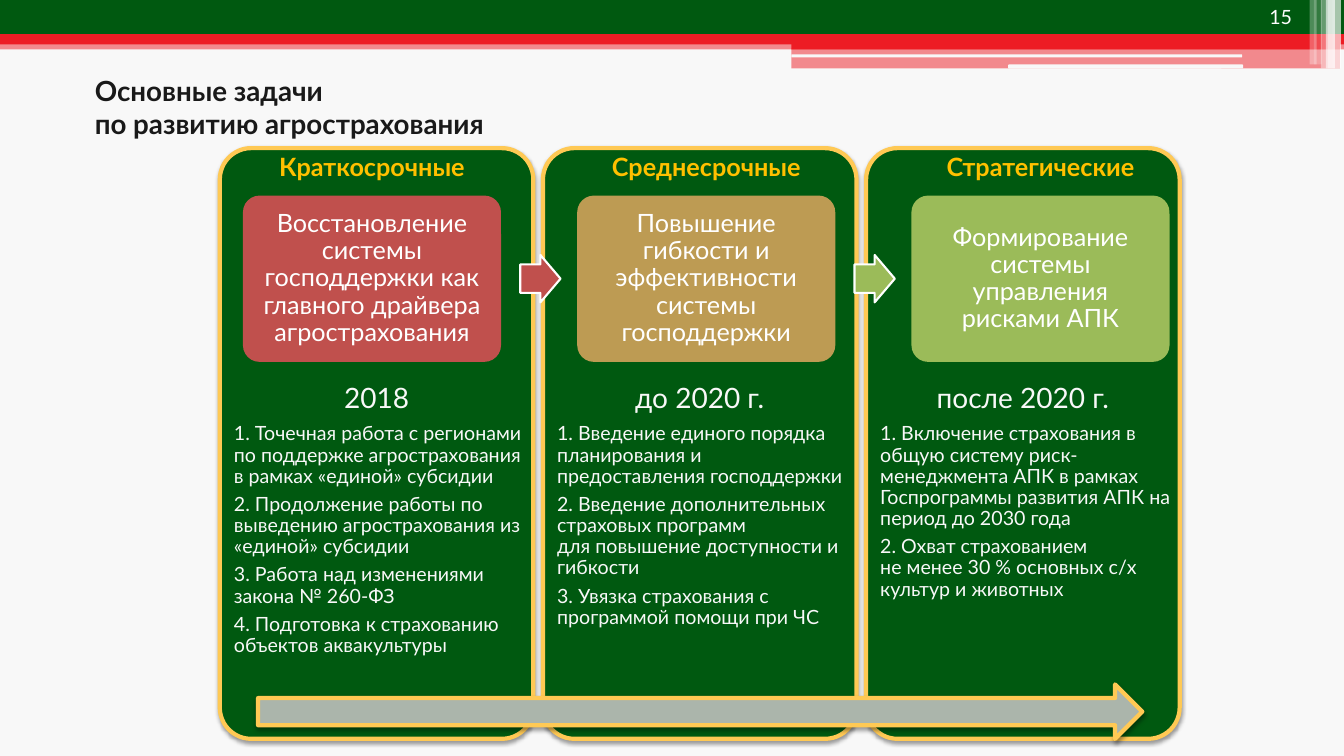
from dataclasses import dataclass

from lxml.etree import SubElement
from pptx import Presentation
from pptx.dml.color import RGBColor
from pptx.enum.shapes import MSO_SHAPE as SHAPE
from pptx.enum.text import MSO_ANCHOR as ANCHOR, MSO_AUTO_SIZE as AUTO, PP_ALIGN as ALIGN
from pptx.oxml.ns import qn
from pptx.util import Inches, Pt


@dataclass(frozen=True)
class Theme:
    """Colours, font and type sizes of the slide."""
    font: str = "Lato"
    paper: str = "F8F8F8"
    white: str = "FFFFFF"
    ink: str = "191919"
    green: str = "005910"
    red: str = "ED1C24"
    gold: str = "FFC954"
    heading: str = "FFC000"
    timeline: str = "ABB5AB"
    goals: tuple = ("C0504D", "BD9B53", "9BBB59")
    steps: tuple = ("C0504D", "9BBB59")
    title_size: float = 19.8
    year_size: float = 20
    goal_size: float = 18
    list_size: float = 14


T = Theme()

STAGES = [
    ("Краткосрочные",
     "Восстановление системы господдержки как главного драйвера агрострахования",
     "2018",
     ["1. Точечная работа с регионами по поддержке агрострахования в рамках «единой» субсидии",
      "2. Продолжение работы по выведению агрострахования из «единой» субсидии",
      "3. Работа над изменениями закона № 260-ФЗ",
      "4. Подготовка к страхованию объектов аквакультуры"]),
    ("Среднесрочные",
     "Повышение гибкости и эффективности системы господдержки",
     "до 2020 г.",
     ["1. Введение единого порядка планирования и предоставления господдержки",
      "2. Введение дополнительных страховых программ\nдля повышение доступности и гибкости",
      "3. Увязка страхования с программой помощи при ЧС"]),
    ("Стратегические",
     "Формирование системы управления рисками АПК",
     "после 2020 г.",
     ["1. Включение страхования в общую систему риск-менеджмента АПК в рамках "
      "Госпрограммы развития АПК на период до 2030 года",
      "2. Охват страхованием\nне менее 30 % основных с/х культур и животных"]),
]


def rgb(color):
    """Turn a hex string into a colour."""
    return RGBColor.from_string(color)


def add_box(slide, kind, box, fill, line=None, width=0, alpha=100, shadow=False):
    """Draw a preset shape in the box, given in inches."""
    sp = slide.shapes.add_shape(kind, *map(Inches, box))
    sp.shadow.inherit = False
    sp.fill.solid()
    sp.fill.fore_color.rgb = rgb(fill)
    if line:
        sp.line.color.rgb = rgb(line)
        sp.line.width = Pt(width)
    else:
        sp.line.fill.background()
    props = sp._element.spPr
    if alpha < 100:
        color = props.find(qn("a:solidFill"))[0]
        SubElement(color, qn("a:alpha"), val=str(alpha * 1000))
    if shadow:
        effect = SubElement(props.find(qn("a:effectLst")), qn("a:outerShdw"),
                            blurRad=str(Pt(3.1)), dist=str(Pt(1.6)),
                            dir="5400000", rotWithShape="0")
        color = SubElement(effect, qn("a:srgbClr"), val="000000")
        SubElement(color, qn("a:alpha"), val="38000")
    return sp


def setup_frame(sp, insets=(0.1, 0.05, 0.1, 0.05), anchor=ANCHOR.TOP):
    """Set wrapping, insets and anchor of a shape's text."""
    tf = sp.text_frame
    tf.word_wrap = True
    tf.auto_size = AUTO.NONE
    tf.vertical_anchor = anchor
    tf.margin_left, tf.margin_top, tf.margin_right, tf.margin_bottom = map(Inches, insets)
    return tf


def add_text(p, text, size, color, bold=False, align=ALIGN.LEFT):
    """Add runs to a paragraph, one for each line of text."""
    p.alignment = align
    for i, part in enumerate(text.split("\n")):
        if i:
            p.add_line_break()
        r = p.add_run()
        r.text = part
        r.font.name = T.font
        r.font.size = Pt(size)
        r.font.bold = bold
        r.font.color.rgb = rgb(color)


def add_header(slide, left, top, width):
    """Draw the coloured bands and the page number along the top."""
    right = left + width
    bands = [
        (SHAPE.RECTANGLE, left, 0.4, width, 0.09, T.red, 50),
        (SHAPE.RECTANGLE, left, 0, width, 0.34, T.green, 100),
        (SHAPE.RECTANGLE, left, 0.34, width, 0.1, T.red, 100),
        (SHAPE.RECTANGLE, right - 5.48, 0.39, 5.44, 0.1, T.red, 100),
        (SHAPE.RECTANGLE, right - 5.48, 0.48, 5.44, 0.2, T.red, 50),
        (SHAPE.ROUNDED_RECTANGLE, right - 5.48, 0.54, 4.47, 0.03, T.paper, 100),
        (SHAPE.ROUNDED_RECTANGLE, right - 3.33, 0.64, 2.33, 0.04, T.paper, 100),
    ]
    stripes = [(0.11, 0.08, 0.68, 65), (0.16, 0.07, 0.68, 65), (0.18, 0.07, 0.68, 60),
               (0.23, 0.07, 0.68, 40), (0.3, 0.08, 0.64, 20), (0.34, 0.07, 0.64, 30)]
    bands += [(SHAPE.RECTANGLE, right - back, 0, w, h, T.white, alpha)
              for back, w, h, alpha in stripes]
    for kind, x, y, w, h, color, alpha in bands:
        add_box(slide, kind, (x, top + y, w, h), color, alpha=alpha)
    number = slide.shapes.add_textbox(*map(Inches, (right - 0.84, top, 0.68, 0.28)))
    add_text(setup_frame(number).paragraphs[0], "15", T.list_size, T.white)


def add_title(slide, left, top, width, height):
    """Fill the title placeholder."""
    title = slide.shapes.title
    title.left, title.top, title.width, title.height = map(Inches, (left, top, width, height))
    add_text(setup_frame(title).paragraphs[0], "Основные задачи\nпо развитию агрострахования",
             T.title_size, T.ink, bold=True)


def add_card(slide, left, top, width, height, year, tasks):
    """Draw a stage card with its year and list of tasks."""
    card = add_box(slide, SHAPE.ROUNDED_RECTANGLE, (left, top, width, height),
                   T.green, T.gold, 3, shadow=True)
    card.adjustments[0] = 0.1
    box = slide.shapes.add_textbox(*map(Inches, (left, top + 2.34, width, 2.34)))
    tf = setup_frame(box, (0.04, 0, 0.04, 0.04))
    for i, text in enumerate([year, *tasks]):
        p = tf.add_paragraph() if i else tf.paragraphs[0]
        size = T.list_size if i else T.year_size
        add_text(p, text, size, T.paper, align=ALIGN.LEFT if i else ALIGN.CENTER)
        p.line_spacing = 0.9
        p.space_after = Pt(round(size * 0.35, 1))
        if i:
            p._p.get_or_add_pPr().set("marL", str(Inches(0.1)))


def add_goal(slide, left, top, width, height, heading, goal, color):
    """Draw a goal box with the stage heading above it."""
    sp = add_box(slide, SHAPE.ROUNDED_RECTANGLE, (left, top, width, height), color)
    sp.adjustments[0] = 0.1
    label = slide.shapes.add_textbox(*map(Inches, (left, top - 0.63, width, 0.71)))
    for part, text, inset, ink, bold in ((sp, goal, 0.12, T.white, False),
                                         (label, heading, 0.07, T.heading, True)):
        p = setup_frame(part, (inset,) * 4, ANCHOR.MIDDLE).paragraphs[0]
        add_text(p, text, T.goal_size, ink, bold, ALIGN.CENTER)
        p.line_spacing = 0.9


def add_stages(slide, left, top, width, height):
    """Place the cards, timeline arrow, goals and step arrows."""
    card_w, card_pitch, goal_pitch = 3.11, (width - 3.11) / 2, 3.315
    for i, (_, _, year, tasks) in enumerate(STAGES):
        add_card(slide, left + i * card_pitch, top, card_w, height, year, tasks)
    add_box(slide, SHAPE.RIGHT_ARROW, (left + 0.38, top + height - 0.54, width - 0.75, 0.54),
            T.timeline, T.gold, 3, shadow=True)
    for i, (heading, goal, _, _) in enumerate(STAGES):
        x = left + 0.23 + i * goal_pitch
        add_goal(slide, x, top + 0.47, 2.56, 1.65, heading, goal, T.goals[i])
        if i < len(T.steps):
            step = add_box(slide, SHAPE.RIGHT_ARROW, (x + 2.75, top + 1.06, 0.4, 0.47),
                           T.steps[i], T.white, 1.5)
            step.adjustments[0] = 0.6
            step.adjustments[1] = 0.5


def main():
    """Build the slide and save it."""
    prs = Presentation()
    prs.slide_width, prs.slide_height = Inches(13.33), Inches(7.5)
    slide = prs.slides.add_slide(prs.slide_layouts[5])
    slide.background.fill.solid()
    slide.background.fill.fore_color.rgb = rgb(T.paper)
    add_header(slide, 0, 0, 13.33)
    add_title(slide, 0.84, 0.68, 12.21, 0.69)
    add_stages(slide, 2.18, 1.47, 9.52, 5.86)
    prs.save("out.pptx")


if __name__ == "__main__":
    main()
